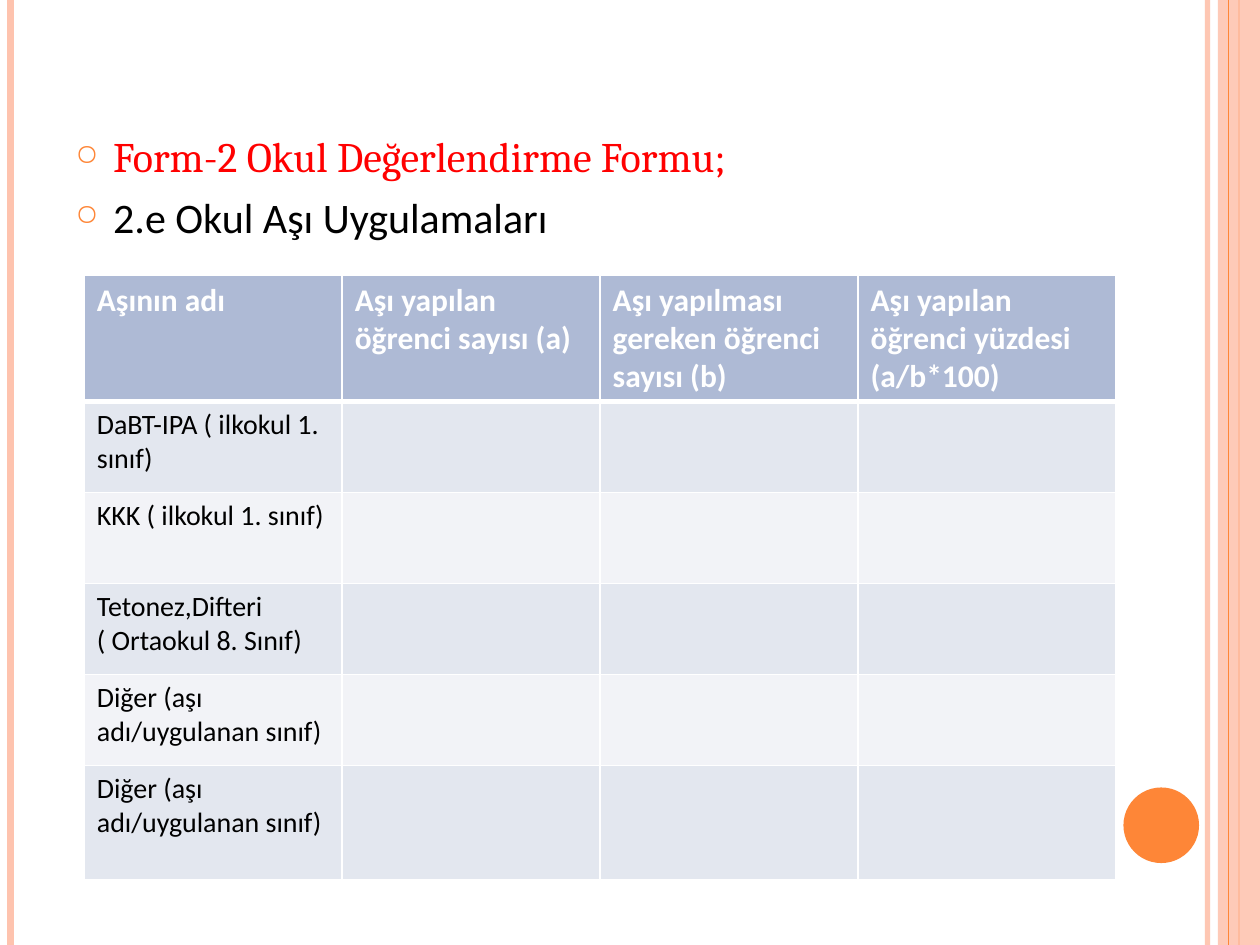
from lxml.etree import SubElement
from pptx import Presentation
from pptx.dml.color import RGBColor
from pptx.enum.shapes import MSO_CONNECTOR, MSO_SHAPE
from pptx.oxml.ns import qn
from pptx.util import Pt

WIDTH, HEIGHT = 720, 540
ORANGE, PEACH, WHITE = "FE8637", "FEC3AE", "FFFFFF"
HEADER_FILL, BAND_FILLS = "AEBAD5", ("E3E7EF", "F2F3F7")
HEADING = {"name": "Cambria", "size": Pt(24), "color": "FF0000"}
SUBHEADING = {"name": "Calibri", "size": Pt(24), "color": "000000"}
HEADER_FONT = {"name": "Calibri", "size": Pt(18), "bold": True, "color": WHITE}
BODY_FONT = {"name": "Calibri", "size": Pt(16), "bold": False, "color": "000000"}

HEADERS = ["Aşının adı", "Aşı yapılan öğrenci sayısı (a)",
           "Aşı yapılması gereken öğrenci sayısı (b)",
           "Aşı yapılan öğrenci yüzdesi (a/b*100)"]
VACCINES = ["DaBT-IPA ( ilkokul 1. sınıf)", "KKK ( ilkokul 1. sınıf)",
            "Tetonez,Difteri ( Ortaokul 8. Sınıf)",
            "Diğer (aşı adı/uygulanan sınıf)", "Diğer (aşı adı/uygulanan sınıf)"]
ROW_HEIGHTS = [72.5, 52, 52, 52, 52, 65]


def set_fill(fill, color):
    fill.solid()
    fill.fore_color.rgb = RGBColor.from_string(color)


def set_alpha(fill_parent, percent):
    """Make the solid fill inside an element partly transparent."""
    color = fill_parent.find(qn("a:solidFill"))[0]
    SubElement(color, qn("a:alpha"), val=str(percent * 1000))


class SlideBuilder:
    def __init__(self, slide):
        self.slide = slide

    def add_text(self, paragraph, text, style):
        run = paragraph.add_run()
        run.text = text
        for name, value in style.items():
            if name == "color":
                set_fill(run.font.fill, value)
            else:
                setattr(run.font, name, value)

    def vertical_line(self, x, color, width, alpha=None):
        line = self.slide.shapes.add_connector(
            MSO_CONNECTOR.STRAIGHT, Pt(x), 0, Pt(x), Pt(HEIGHT))
        set_fill(line.line.fill, color)
        line.line.width = Pt(width)
        properties = line._element.spPr
        if alpha:
            set_alpha(properties.find(qn("a:ln")), alpha)
        SubElement(properties, qn("a:effectLst"))

    def shape(self, kind, left, top, width, height, color, alpha=None):
        shape = self.slide.shapes.add_shape(
            kind, Pt(left), Pt(top), Pt(width), Pt(height))
        shape.shadow.inherit = False
        set_fill(shape.fill, color)
        shape.line.fill.background()
        if alpha:
            set_alpha(shape._element.spPr, alpha)

    def bullets(self, left, top, width, height, items):
        box = self.slide.shapes.add_textbox(Pt(left), Pt(top), Pt(width), Pt(height))
        frame = box.text_frame
        frame.word_wrap = True
        for index, (text, style) in enumerate(items):
            paragraph = frame.add_paragraph() if index else frame.paragraphs[0]
            paragraph.space_before = Pt(6)
            self.add_text(paragraph, text, style)
            properties = paragraph._p.get_or_add_pPr()
            properties.set("marL", str(Pt(21.6)))
            properties.set("indent", str(-Pt(21.6)))
            color = SubElement(properties, qn("a:buClr"))
            SubElement(color, qn("a:srgbClr"), val=ORANGE)
            SubElement(properties, qn("a:buSzPct"), val="70000")
            SubElement(properties, qn("a:buChar"), char="○")

    def cell(self, cell, text, style, fill, bottom_width):
        if text:
            self.add_text(cell.text_frame.paragraphs[0], text, style)
        properties = cell._tc.get_or_add_tcPr()
        for side, width in zip("LRTB", (1, 1, 1, bottom_width)):
            border = SubElement(properties, qn(f"a:ln{side}"), w=str(Pt(width)))
            solid = SubElement(border, qn("a:solidFill"))
            SubElement(solid, qn("a:srgbClr"), val=WHITE)
        set_fill(cell.fill, fill)

    def table(self, left, top, width, row_heights, rows):
        table = self.slide.shapes.add_table(
            len(rows), len(rows[0]), Pt(left), Pt(top), Pt(width),
            Pt(sum(row_heights))).table
        for index, texts in enumerate(rows):
            table.rows[index].height = Pt(row_heights[index])
            if index == 0:
                look = HEADER_FONT, HEADER_FILL, 3
            else:
                look = BODY_FONT, BAND_FILLS[(index - 1) % 2], 1
            for column, text in enumerate(texts):
                self.cell(table.cell(index, column), text, *look)


def main():
    presentation = Presentation()
    presentation.slide_width, presentation.slide_height = Pt(WIDTH), Pt(HEIGHT)
    builder = SlideBuilder(presentation.slides.add_slide(presentation.slide_layouts[6]))

    builder.vertical_line(690, PEACH, 3, alpha=93)
    builder.vertical_line(6, PEACH, 4.5)
    builder.vertical_line(708, ORANGE, 1.5)
    builder.shape(MSO_SHAPE.RECTANGLE, 696, 0, 24, HEIGHT, PEACH, alpha=87)
    builder.vertical_line(702, ORANGE, 0.75)
    builder.shape(MSO_SHAPE.OVAL, 642, 450, 43.2, 43.2, ORANGE)

    builder.bullets(36, 71.25, 588, 438.5, [
        ("Form-2 Okul Değerlendirme Formu;", HEADING),
        ("2.e Okul Aşı Uygulamaları", SUBHEADING)])
    blanks = [""] * (len(HEADERS) - 1)
    builder.table(48.2, 157, 589.6, ROW_HEIGHTS,
                  [HEADERS] + [[vaccine] + blanks for vaccine in VACCINES])
    presentation.save("out.pptx")


if __name__ == "__main__":
    main()
